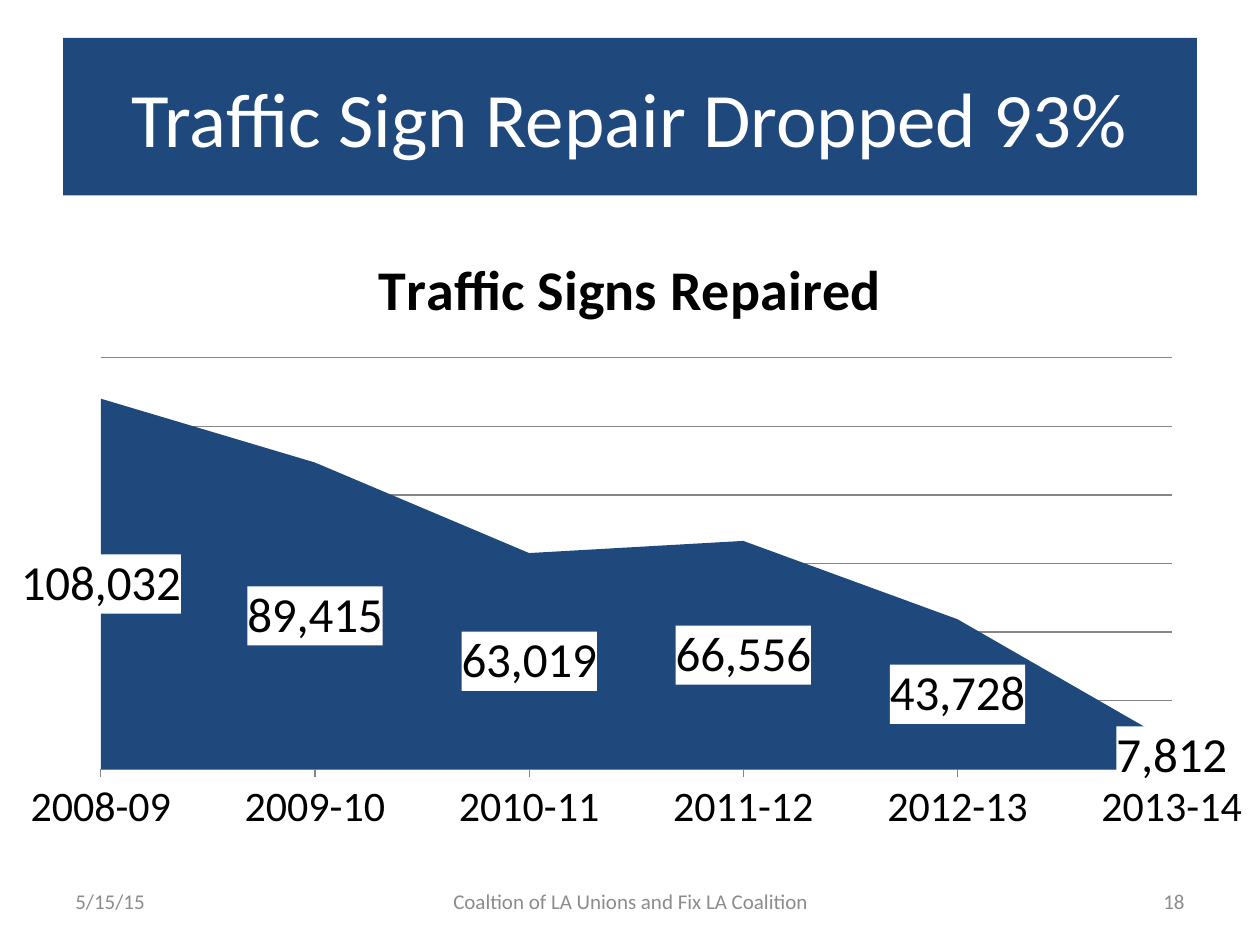
from dataclasses import dataclass

import pptx
import pptx.chart.data
import pptx.dml.color
import pptx.enum.chart
import pptx.enum.text
import pptx.oxml
import pptx.oxml.ns
import pptx.util
from pptx.util import Inches

Align = pptx.enum.text.PP_ALIGN
qn = pptx.oxml.ns.qn


def rgb(value: str) -> pptx.dml.color.RGBColor:
    return pptx.dml.color.RGBColor.from_string(value)


@dataclass(frozen=True)
class Theme:
    font: str = "Calibri"
    navy: str = "1F497D"
    white: str = "FFFFFF"
    black: str = "000000"
    footer_grey: str = "8C8C8C"
    grid_grey: str = "868686"
    title_size: int = 44
    chart_title_size: int = 32
    label_size: int = 28
    category_size: int = 24
    footer_size: int = 12


@dataclass(frozen=True)
class FooterItem:
    text: str
    left: float
    width: float
    align: Align


THEME = Theme()
HEADLINE = "Traffic Sign Repair Dropped 93%"
MEASURE = "Traffic Signs Repaired"
REPAIRS = {
    "2008-09": 108032,
    "2009-10": 89415,
    "2010-11": 63019,
    "2011-12": 66556,
    "2012-13": 43728,
    "2013-14": 7812,
}
FOOTER = (
    FooterItem("5/15/15", 0.5, 2.33, Align.LEFT),
    FooterItem("Coaltion of LA Unions and Fix LA Coalition", 3.42, 3.17, Align.CENTER),
    FooterItem("18", 7.17, 2.33, Align.RIGHT),
)


def style_font(font, size: int, color: str, bold: bool = False) -> None:
    font.name = THEME.font
    font.size = pptx.util.Pt(size)
    font.bold = bold
    font.color.rgb = rgb(color)


def style_line(line) -> None:
    line.color.rgb = rgb(THEME.grid_grey)
    line.width = pptx.util.Pt(0.75)


def style_text(text_frame, text: str, size: int, color: str, align: Align) -> None:
    text_frame.text = text
    text_frame.word_wrap = True
    text_frame.vertical_anchor = pptx.enum.text.MSO_ANCHOR.MIDDLE
    paragraph = text_frame.paragraphs[0]
    paragraph.alignment = align
    style_font(paragraph.runs[0].font, size, color)


def add_headline(slide) -> None:
    headline = slide.shapes.title
    headline.left, headline.top = Inches(0.5), Inches(0.3)
    headline.width, headline.height = Inches(9), Inches(1.25)
    headline.fill.solid()
    headline.fill.fore_color.rgb = rgb(THEME.navy)
    style_text(headline.text_frame, HEADLINE, THEME.title_size, THEME.white, Align.CENTER)


def add_footer_item(slide, item: FooterItem) -> None:
    box = slide.shapes.add_textbox(
        Inches(item.left), Inches(6.95), Inches(item.width), Inches(0.4)
    )
    style_text(box.text_frame, item.text, THEME.footer_size, THEME.footer_grey, item.align)


def set_plot_area(chart, x: float, y: float, width: float, height: float) -> None:
    plot_area = chart._chartSpace.chart.plotArea
    for layout in plot_area.findall(qn("c:layout")):
        plot_area.remove(layout)
    plot_area.insert(0, pptx.oxml.parse_xml(
        f'<c:layout {pptx.oxml.ns.nsdecls("c")}><c:manualLayout>'
        '<c:layoutTarget val="inner"/><c:xMode val="edge"/><c:yMode val="edge"/>'
        f'<c:x val="{x}"/><c:y val="{y}"/><c:w val="{width}"/><c:h val="{height}"/>'
        '</c:manualLayout></c:layout>'
    ))


def style_axes(chart) -> None:
    years = chart.category_axis
    years.major_tick_mark = pptx.enum.chart.XL_TICK_MARK.OUTSIDE
    years.has_major_gridlines = False
    style_font(years.tick_labels.font, THEME.category_size, THEME.black)
    style_line(years.format.line)

    counts = chart.value_axis
    counts.minimum_scale, counts.maximum_scale = 0, 120000
    counts.major_unit = 20000
    counts.has_major_gridlines = True
    style_line(counts.major_gridlines.format.line)
    counts.tick_labels.number_format = "#,##0"
    counts.tick_labels.number_format_is_linked = False
    counts.visible = False
    counts._element.find(qn("c:crossBetween")).set("val", "midCat")


def style_value_labels(series) -> None:
    labels = series.data_labels
    labels.show_value = True
    labels.number_format = "#,##0"
    labels.number_format_is_linked = False
    style_font(labels.font, THEME.label_size, THEME.black)
    label_fill = pptx.oxml.parse_xml(
        f'<c:spPr {pptx.oxml.ns.nsdecls("c", "a")}><a:solidFill>'
        f'<a:srgbClr val="{THEME.white}"/></a:solidFill></c:spPr>'
    )
    labels._element.find(qn("c:txPr")).addprevious(label_fill)


def add_repairs_chart(slide) -> None:
    data = pptx.chart.data.CategoryChartData(number_format="#,##0")
    data.categories = list(REPAIRS)
    data.add_series(MEASURE, list(REPAIRS.values()))
    chart = slide.shapes.add_chart(
        pptx.enum.chart.XL_CHART_TYPE.AREA,
        Inches(0), Inches(1.75), Inches(10), Inches(4.95), data,
    ).chart
    style_font(chart.font, 10, THEME.black)
    chart.has_legend = False
    chart.has_title = True
    chart.chart_title.include_in_layout = False
    heading = chart.chart_title.text_frame
    heading.text = MEASURE
    style_font(
        heading.paragraphs[0].runs[0].font, THEME.chart_title_size, THEME.black, bold=True
    )
    plot = chart.plots[0]
    plot.vary_by_categories = False
    repairs = plot.series[0]
    repairs.format.fill.solid()
    repairs.format.fill.fore_color.rgb = rgb(THEME.navy)
    style_value_labels(repairs)
    style_axes(chart)
    set_plot_area(chart, 0.08, 0.22, 0.85, 0.66)


def main() -> None:
    deck = pptx.Presentation()
    deck.slide_width, deck.slide_height = Inches(10), Inches(7.5)
    slide = deck.slides.add_slide(deck.slide_layouts.get_by_name("Title Only"))
    add_headline(slide)
    for item in FOOTER:
        add_footer_item(slide, item)
    add_repairs_chart(slide)
    deck.save("out.pptx")


if __name__ == "__main__":
    main()
